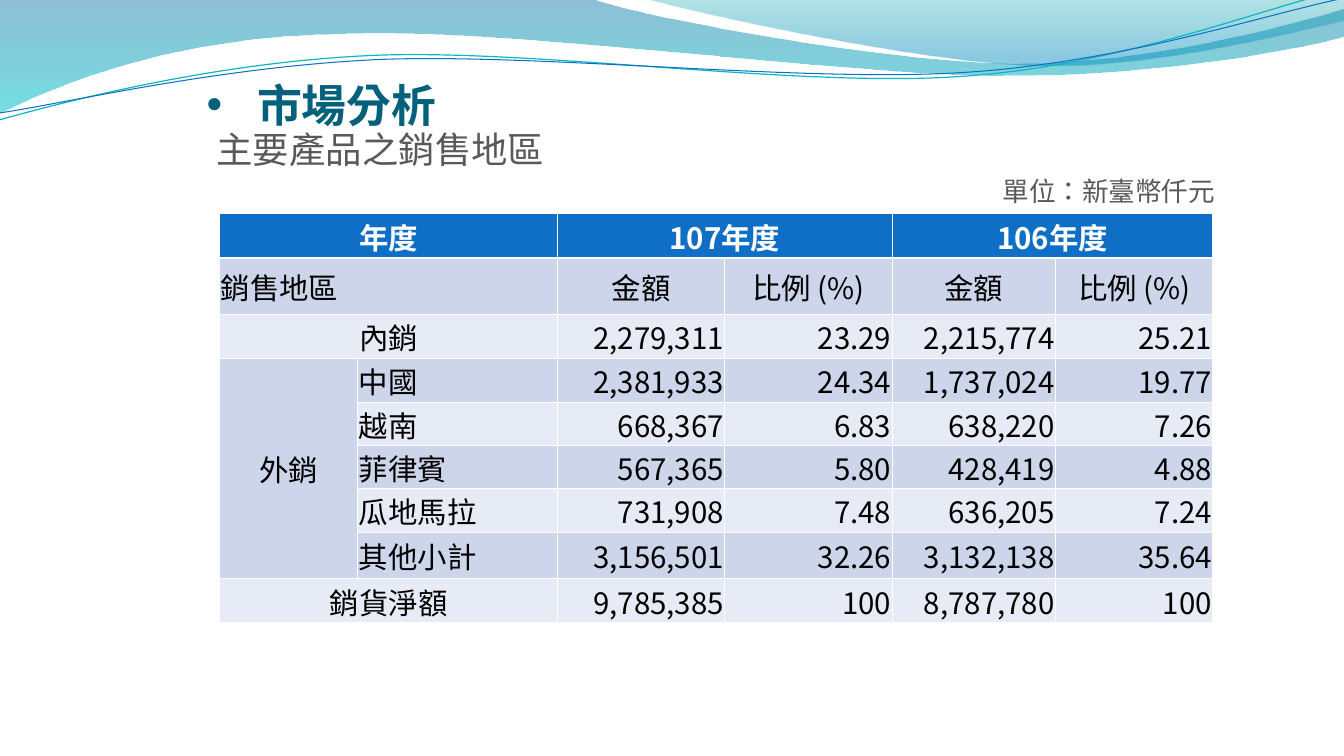
from lxml import etree
from pptx import Presentation, util as u
from pptx.dml.color import RGBColor
from pptx.enum import text
from pptx.oxml import ns

FONT = "Noto Sans CJK SC"
WIDTH, HEIGHT = 13.33, 7.5
LEFT, CENTER, RIGHT = text.PP_ALIGN.LEFT, text.PP_ALIGN.CENTER, text.PP_ALIGN.RIGHT

# Content
TITLE = "市場分析"
SUBTITLE, UNIT = "主要產品之銷售地區", "單位：新臺幣仟元"
ROWS = [
    ("年度", "", "107年度", "", "106年度", ""),
    ("銷售地區", "", "金額", "比例 (%)", "金額", "比例 (%)"),
    ("內銷", "", "2,279,311", "23.29", "2,215,774", "25.21"),
    ("外銷", "中國", "2,381,933", "24.34", "1,737,024", "19.77"),
    ("", "越南", "668,367", "6.83", "638,220", "7.26"),
    ("", "菲律賓", "567,365", "5.80", "428,419", "4.88"),
    ("", "瓜地馬拉", "731,908", "7.48", "636,205", "7.24"),
    ("", "其他小計", "3,156,501", "32.26", "3,132,138", "35.64"),
    ("銷貨淨額", "", "9,785,385", "100", "8,787,780", "100"),
]
MERGES = [(0, 0, 0, 1), (0, 2, 0, 3), (0, 4, 0, 5), (1, 0, 1, 1),
          (2, 0, 2, 1), (3, 0, 7, 0), (8, 0, 8, 1)]
COLUMN_WIDTHS = [1.37, 1.98, 1.66, 1.66, 1.62, 1.56]
ROW_HEIGHTS = [0.44, 0.56, 0.44, 0.43, 0.43, 0.43, 0.43, 0.46, 0.44]
HEADER, BANDS = "0F6FC6", ("E7EBF5", "CCD5EA")

# Waves: a start point, then lines (2 numbers) and Bezier curves (6 numbers)
BANDS_OF_WATER = [
    ([(0, 0), (5.87, -0.01), (6.34, 0.17, 8.85, 0.63, 10.11, 0.63),
      (11.38, 0.63, 12.78, 0.26, 13.33, 0.09), (13.35, 0.36),
      (13.11, 0.44, 11.6, 0.76, 9.94, 0.75), (8.29, 0.75, 5.09, 0.28, 3.43, 0.34),
      (1.72, 0.36, 0.61, 0.83, -0.01, 1.13), (0, 0)],
     [(0, "0074A1", 45), (1, "00C6CF", 55)]),
    ([(6.39, -0.01), (6.79, 0.11, 9.09, 0.62, 10.25, 0.65),
      (11.41, 0.69, 12.82, 0.32, 13.33, 0.21), (13.33, 0), (6.39, -0.01)],
     [(0, "00A1A9", 30), (0.8, "008BBF", 45)]),
]
WAVE_LINES = [
    ([(-0.01, 1.19), (0.64, 1.01, 2.11, 0.62, 3.69, 0.55),
      (5.27, 0.48, 7.9, 0.87, 9.5, 0.76), (11.1, 0.66, 12.52, 0.08, 13.31, -0.1)],
     "0AB8BF", 0.85),
    ([(0, 1.12), (0.63, 1.03, 2.18, 0.66, 3.78, 0.59),
      (5.37, 0.53, 7.96, 0.82, 9.55, 0.72), (11.15, 0.62, 12.55, 0.14, 13.34, -0.02)],
     "0F6FC6", 0.75),
]


def color(value):
    return RGBColor.from_string(value)


def apply(target, values):
    for name, value in values.items():
        setattr(target, name, value)


def margins(left, top, right, bottom):
    sides = zip(("left", "top", "right", "bottom"), (left, top, right, bottom))
    return {f"margin_{side}": u.Inches(size) for side, size in sides}


def write(paragraph, words, size, ink, bold=False, **layout):
    apply(paragraph, layout)
    run = paragraph.add_run()
    run.text = words
    apply(run.font, {"size": u.Pt(size), "bold": bold, "name": FONT})
    run.font.color.rgb = color(ink)
    run.font._element.set("lang", "zh-TW")
    east_asian = etree.SubElement(run.font._element, ns.qn("a:ea"))
    east_asian.set("typeface", FONT)


def text_frame(slide, box, insets, anchor):
    frame = slide.shapes.add_textbox(*map(u.Inches, box)).text_frame
    apply(frame, {"word_wrap": True, "vertical_anchor": anchor, **margins(*insets)})
    return frame


def add_wave(slide, outline, close):
    """Lay down every node, then join each three nodes of a curve."""
    start, *segments = outline
    nodes = [tuple(map(u.Inches, segment[i:i + 2]))
             for segment in segments for i in range(0, len(segment), 2)]
    builder = slide.shapes.build_freeform(*map(u.Inches, start))
    builder.add_line_segments(nodes, close=close)
    shape = builder.convert_to_shape()
    shape.shadow.inherit = False
    steps = iter(list(shape._element.spPr.iter(ns.qn("a:lnTo"))))
    for segment in segments:
        step = next(steps)
        if len(segment) == 6:
            curve = etree.Element(ns.qn("a:cubicBezTo"))
            step.addprevious(curve)
            for node in (step, next(steps), next(steps)):
                curve.append(node[0])
                node.getparent().remove(node)
    return shape


def add_waves(slide):
    for outline, stops in BANDS_OF_WATER:
        shape = add_wave(slide, outline, True)
        shape.line.fill.background()
        shape.fill.gradient()
        shape.fill.gradient_angle = 270
        for stop, (position, shade, opacity) in zip(shape.fill.gradient_stops, stops):
            stop.position = position
            stop.color.rgb = color(shade)
        shades = shape._element.spPr.iter(ns.qn("a:srgbClr"))
        for element, (_, _, opacity) in zip(shades, stops):
            etree.SubElement(element, ns.qn("a:alpha")).set("val", str(opacity * 1000))
    for outline, shade, width in WAVE_LINES:
        shape = add_wave(slide, outline, False)
        shape.fill.background()
        shape.line.color.rgb = color(shade)
        shape.line.width = u.Pt(width)


def add_headings(slide):
    frame = text_frame(slide, (2.05, 0.58, 10.02, 0.88), (0, 0.05, 0, 0.02),
                       text.MSO_ANCHOR.MIDDLE)
    title = frame.paragraphs[0]
    write(title, TITLE, 32, "04617B", bold=True)
    properties = title._p.get_or_add_pPr()
    properties.set("marL", str(u.Inches(0.5)))
    properties.set("indent", str(u.Inches(-0.5)))
    etree.SubElement(properties, ns.qn("a:buFont")).set("typeface", "Arial")
    etree.SubElement(properties, ns.qn("a:buChar")).set("char", "•")

    frame = text_frame(slide, (2.05, 1.19, 10.1, 0.95), (0.1, 0.12, 0.1, 0.05),
                       text.MSO_ANCHOR.TOP)
    write(frame.paragraphs[0], SUBTITLE, 26, "595959", line_spacing=0.9)
    write(frame.add_paragraph(), UNIT, 19, "595959", line_spacing=0.9,
          space_before=u.Pt(5), alignment=RIGHT)


def add_border(cell, header_edge):
    properties = cell._tc.get_or_add_tcPr()
    for index, side in enumerate("LRTB"):
        line = etree.Element(ns.qn(f"a:ln{side}"))
        line.set("w", str(u.Pt(1.5 if side == header_edge else 1)))
        fill = etree.SubElement(line, ns.qn("a:solidFill"))
        etree.SubElement(fill, ns.qn("a:srgbClr")).set("val", "FFFFFF")
        properties.insert(index, line)


def alignment_of(row, column):
    if row == 0:
        return CENTER
    if row == 1:
        return CENTER if column > 1 else LEFT
    return (CENTER, LEFT, RIGHT, RIGHT, RIGHT, RIGHT)[column]


def add_sales_table(slide):
    box = (2.18, 2.12, sum(COLUMN_WIDTHS), sum(ROW_HEIGHTS))
    table = slide.shapes.add_table(len(ROWS), len(COLUMN_WIDTHS),
                                   *map(u.Inches, box)).table
    for column, width in zip(table.columns, COLUMN_WIDTHS):
        column.width = u.Inches(width)
    for row, height in zip(table.rows, ROW_HEIGHTS):
        row.height = u.Inches(height)
    for top, left, bottom, right in MERGES:
        table.cell(top, left).merge(table.cell(bottom, right))
    for r, values in enumerate(ROWS):
        for c, words in enumerate(values):
            cell = table.cell(r, c)
            apply(cell, {"vertical_anchor": text.MSO_ANCHOR.MIDDLE,
                         **margins(0.01, 0.01, 0.01, 0)})
            cell.fill.solid()
            cell.fill.fore_color.rgb = color(BANDS[r % 2] if r else HEADER)
            add_border(cell, {0: "B", 1: "T"}.get(r))
            if words:
                write(cell.text_frame.paragraphs[0], words, 21,
                      "000000" if r else "FFFFFF", bold=r == 0,
                      alignment=alignment_of(r, c))


def main():
    presentation = Presentation()
    apply(presentation, {"slide_width": u.Inches(WIDTH), "slide_height": u.Inches(HEIGHT)})
    slide = presentation.slides.add_slide(presentation.slide_layouts[6])
    add_waves(slide)
    add_headings(slide)
    add_sales_table(slide)
    presentation.save("out.pptx")


if __name__ == "__main__":
    main()
